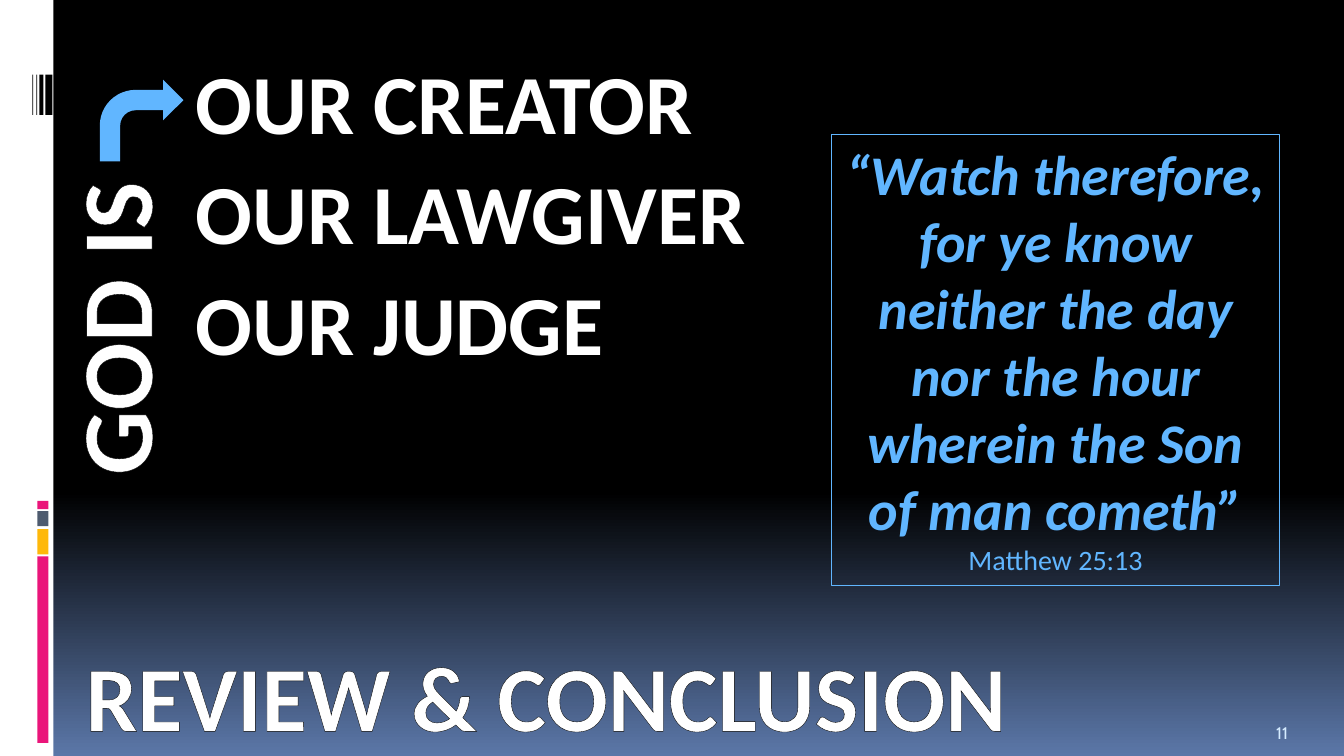
import pptx
import pptx.dml.color
import pptx.enum.shapes
import pptx.enum.text
import pptx.oxml
import pptx.oxml.ns
import pptx.util

Inches = pptx.util.Inches
Pt = pptx.util.Pt
RGBColor = pptx.dml.color.RGBColor
MSO_SHAPE = pptx.enum.shapes.MSO_SHAPE
PP_ALIGN = pptx.enum.text.PP_ALIGN
MSO_ANCHOR = pptx.enum.text.MSO_ANCHOR

WHITE = RGBColor(0xFF, 0xFF, 0xFF)
BLACK = RGBColor(0x00, 0x00, 0x00)
STEEL = RGBColor(0x5B, 0x77, 0xA8)
PINK = RGBColor(0xEA, 0x15, 0x7A)
AMBER = RGBColor(0xFE, 0xB8, 0x0A)
SLATE = RGBColor(0x4E, 0x5B, 0x6F)
SKY = RGBColor(0x61, 0xB6, 0xFF)
PALE = RGBColor(0xD6, 0xEC, 0xFF)

ROLES = ["OUR CREATOR", "OUR LAWGIVER", "OUR JUDGE"]
SUBJECT = "GOD IS"
TITLE = "REVIEW & CONCLUSION"
VERSE = "“Watch therefore, for ye know neither the day nor the hour wherein the Son of man cometh”"
REFERENCE = " Matthew 25:13"
PAGE_NUMBER = "11"

COLOR_BLOCKS = [(5.52, 1.85, PINK), (5.25, 0.25, AMBER), (5.07, 0.15, SLATE), (4.97, 0.08, PINK)]
BARCODE = [(0.45, 0.07), (0.39, 0.04), (0.36, 0.01), (0.32, 0.01)]


def add_block(slide, kind, box, color):
    shape = slide.shapes.add_shape(kind, *map(Inches, box))
    shape.shadow.inherit = False
    shape.fill.solid()
    shape.fill.fore_color.rgb = color
    shape.line.fill.background()
    return shape


def add_text_box(slide, box, anchor=MSO_ANCHOR.TOP):
    text_box = slide.shapes.add_textbox(*map(Inches, box))
    text_box.text_frame.word_wrap = True
    text_box.text_frame.vertical_anchor = anchor
    return text_box


def add_run(paragraph, text, size, color, bold=False, italic=False, name="Calibri"):
    run = paragraph.add_run()
    run.text = text
    run.font.name = name
    run.font.size = Pt(size)
    run.font.bold = bold
    run.font.italic = italic
    run.font.color.rgb = color
    return run


def outline(run):
    line = pptx.oxml.parse_xml(
        f'<a:ln {pptx.oxml.ns.nsdecls("a")} w="{Pt(0.75)}"><a:solidFill>'
        f'<a:srgbClr val="{BLACK}"/></a:solidFill></a:ln>'
    )
    run.font._element.insert(0, line)


def add_background(slide):
    fill = slide.background.fill
    fill.gradient()
    fill.gradient_angle = 270
    for stop, position, color in zip(fill.gradient_stops, (0.65, 1), (BLACK, STEEL)):
        stop.position = position
        stop.color.rgb = color


def add_sidebar(slide):
    add_block(slide, MSO_SHAPE.RECTANGLE, (0, 0, 0.53, 7.5), WHITE)
    for top, height, color in COLOR_BLOCKS:
        add_block(slide, MSO_SHAPE.RECTANGLE, (0.37, top, 0.11, height), color)
    for left, width in BARCODE:
        add_block(slide, MSO_SHAPE.RECTANGLE, (left, 0.74, width, 0.4), BLACK)


def add_roles(slide):
    frame = add_text_box(slide, (1.77, 0.45, 11.14, 3.33)).text_frame
    frame.margin_left = Inches(0.17)
    for index, role in enumerate(ROLES):
        paragraph = frame.add_paragraph() if index else frame.paragraphs[0]
        paragraph.space_before = Pt(7)
        add_run(paragraph, role, 60, WHITE, bold=True)


def add_headings(slide):
    subject = add_text_box(slide, (-0.55, 2.6, 3.33, 1.31))
    subject.rotation = 270
    paragraph = subject.text_frame.paragraphs[0]
    paragraph.alignment = PP_ALIGN.CENTER
    outline(add_run(paragraph, SUBJECT, 72, WHITE, bold=True))
    add_block(slide, MSO_SHAPE.BENT_ARROW, (0.99, 0.79, 0.83, 0.81), SKY)
    title = add_text_box(slide, (0.75, 6.29, 10.75, 1.21))
    outline(add_run(title.text_frame.paragraphs[0], TITLE, 66, WHITE, bold=True))


def add_verse(slide):
    verse = add_text_box(slide, (8.25, 1.33, 4.44, 4.48))
    verse.line.color.rgb = SKY
    verse.line.width = Pt(0.75)
    paragraph = verse.text_frame.paragraphs[0]
    paragraph.alignment = PP_ALIGN.CENTER
    add_run(paragraph, VERSE, 40, SKY, bold=True, italic=True)
    add_run(paragraph, REFERENCE, 20, SKY)


def main():
    presentation = pptx.Presentation()
    presentation.slide_width = Inches(13.33)
    presentation.slide_height = Inches(7.5)
    slide = presentation.slides.add_slide(presentation.slide_layouts[6])
    add_background(slide)
    add_sidebar(slide)
    add_roles(slide)
    number = add_text_box(slide, (12.56, 7.02, 0.67, 0.4), MSO_ANCHOR.BOTTOM)
    add_run(number.text_frame.paragraphs[0], PAGE_NUMBER, 12, PALE, name="Cabin")
    add_headings(slide)
    add_verse(slide)
    presentation.save("out.pptx")


if __name__ == "__main__":
    main()
